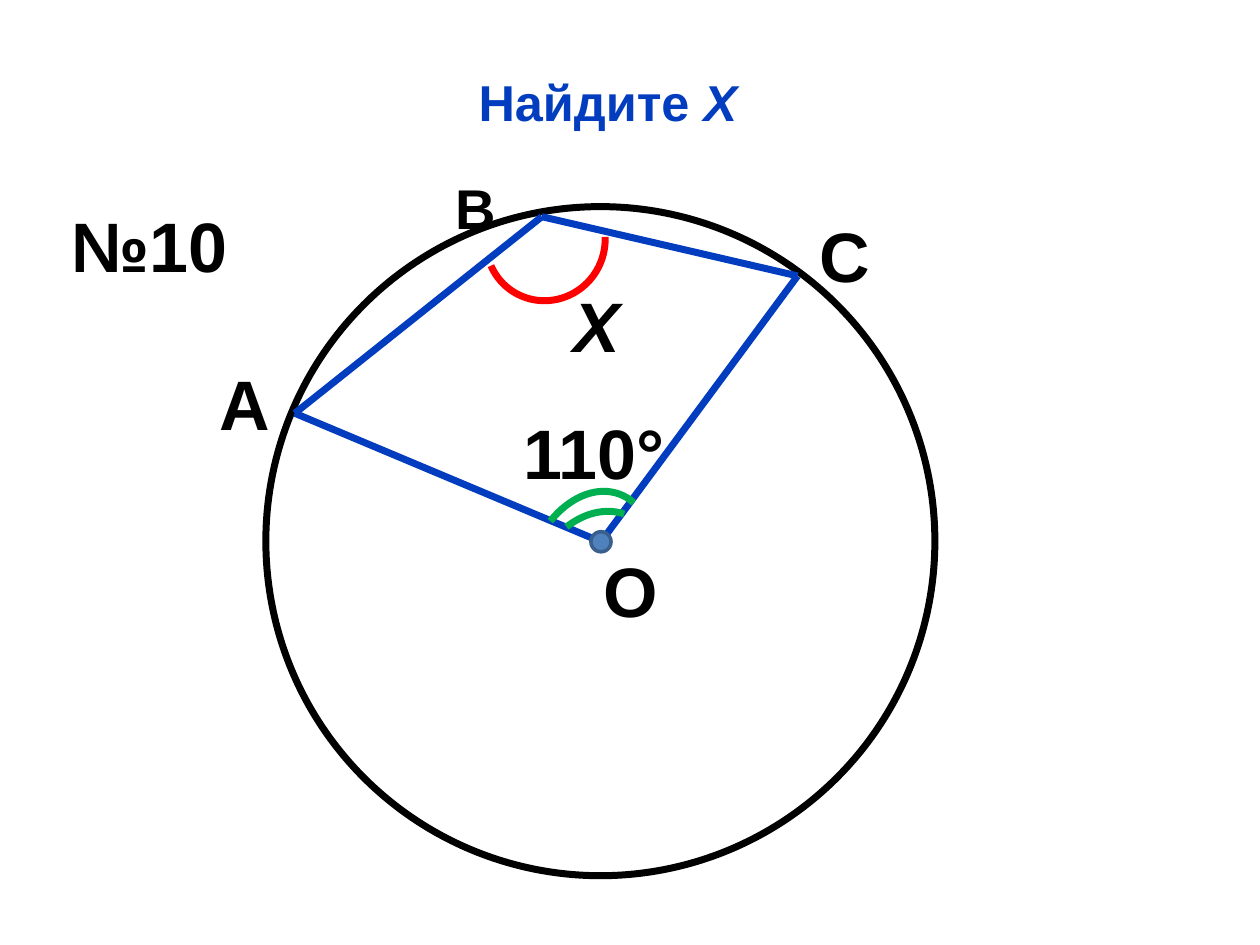
from pptx import Presentation
from pptx.dml.color import RGBColor
from pptx.enum.shapes import MSO_CONNECTOR as Conn, MSO_SHAPE as Shape
from pptx.enum.text import MSO_ANCHOR as Anchor, MSO_AUTO_SIZE as Auto, PP_ALIGN as Align
from pptx.oxml.ns import qn
from pptx.util import Inches, Pt
from lxml.etree import SubElement

BLUE, BLACK, GREEN = "033DBF", "000000", "00B050"


def paint(color, tint):
    """Give a fill or font colour a hex value."""
    color.rgb = RGBColor.from_string(tint)


def draw(kind, box, tint, width, fill=None):
    """Add an outlined shape, filled only when a fill is given."""
    item = shapes.add_shape(kind, *map(Inches, box))
    item.shadow.inherit = False
    paint(item.line.color, tint)
    item.line.width = Pt(width)
    if fill:
        item.fill.solid()
        paint(item.fill.fore_color, fill)
    else:
        item.fill.background()
    return item


deck = Presentation()
deck.slide_width, deck.slide_height = Inches(10), Inches(7.5)
slide = deck.slides.add_slide(deck.slide_layouts[5])
shapes = slide.shapes

# Title
title = shapes.title
title.left, title.top = Inches(0.35), Inches(0.52)
title.width, title.height = Inches(8.95), Inches(0.57)
frame = title.text_frame
frame.auto_size = Auto.NONE
frame.vertical_anchor = Anchor.MIDDLE
para = frame.paragraphs[0]
para.alignment = Align.CENTER
para.font.name, para.font.size, para.font.bold = "Arial", Pt(28.8), True
paint(para.font.color, BLUE)
para.add_run().text = "Найдите "
run = para.add_run()
run.text = "Х"
run.font.italic = True

# Circle, quadrilateral ABCO and centre
draw(Shape.OVAL, (2.11, 1.64, 5.31, 5.31), BLACK, 4, "FFFFFF")
points = [(2.34, 3.28), (4.3, 1.72), (6.33, 2.19), (4.77, 4.3)]
for start, end in zip(points, points[1:] + points[:1]):
    side = shapes.add_connector(Conn.STRAIGHT, *map(Inches, start + end))
    paint(side.line.color, BLUE)
    side.line.width = Pt(4)
    SubElement(side.element.spPr, qn("a:effectLst"))
draw(Shape.OVAL, (4.69, 4.22, 0.16, 0.16), "3A5F8C", 2, "4F81BD")

# Angle marks: box, rotation, start and end in degrees, colour
arcs = [
    ((3.86, 1.43, 0.94, 0.96), 32.8, 323.6, 122.5, "FF0000"),
    ((4.19, 4.04, 1.06, 1.43), 19.7, 228.96, 269.45, GREEN),
    ((4.19, 3.88, 0.98, 1.38), 19.7, 214.5, 281.51, GREEN),
]
for box, turn, start, end, tint in arcs:
    arc = draw(Shape.ARC, box, tint, 4)
    arc.rotation = turn
    # Angles are stored in 60000ths of a degree, adjustments in 100000ths
    arc.adjustments[0] = start * 0.6
    arc.adjustments[1] = end * 0.6

# Labels: text, box, size, italic
labels = [
    ("О", (4.69, 4.3, 0.64, 0.77), 40, False),
    ("110°", (4.06, 3.2, 1.33, 0.77), 40, False),
    ("Х", (4.45, 2.19, 0.7, 0.77), 40, True),
    ("А", (1.64, 2.81, 0.62, 0.77), 40, False),
    ("С", (6.41, 1.64, 1.33, 0.77), 40, False),
    ("В", (3.52, 1.33, 0.7, 0.64), 32, False),
    ("№10", (0.47, 1.56, 1.56, 0.77), 40, False),
]
for text, box, size, slant in labels:
    frame = shapes.add_textbox(*map(Inches, box)).text_frame
    frame.word_wrap = True
    frame.auto_size = Auto.SHAPE_TO_FIT_TEXT
    para = frame.paragraphs[0]
    para.text = text
    font = para.font
    font.name, font.size, font.bold, font.italic = "Arial", Pt(size), True, slant
    paint(font.color, BLACK)

deck.save("out.pptx")
